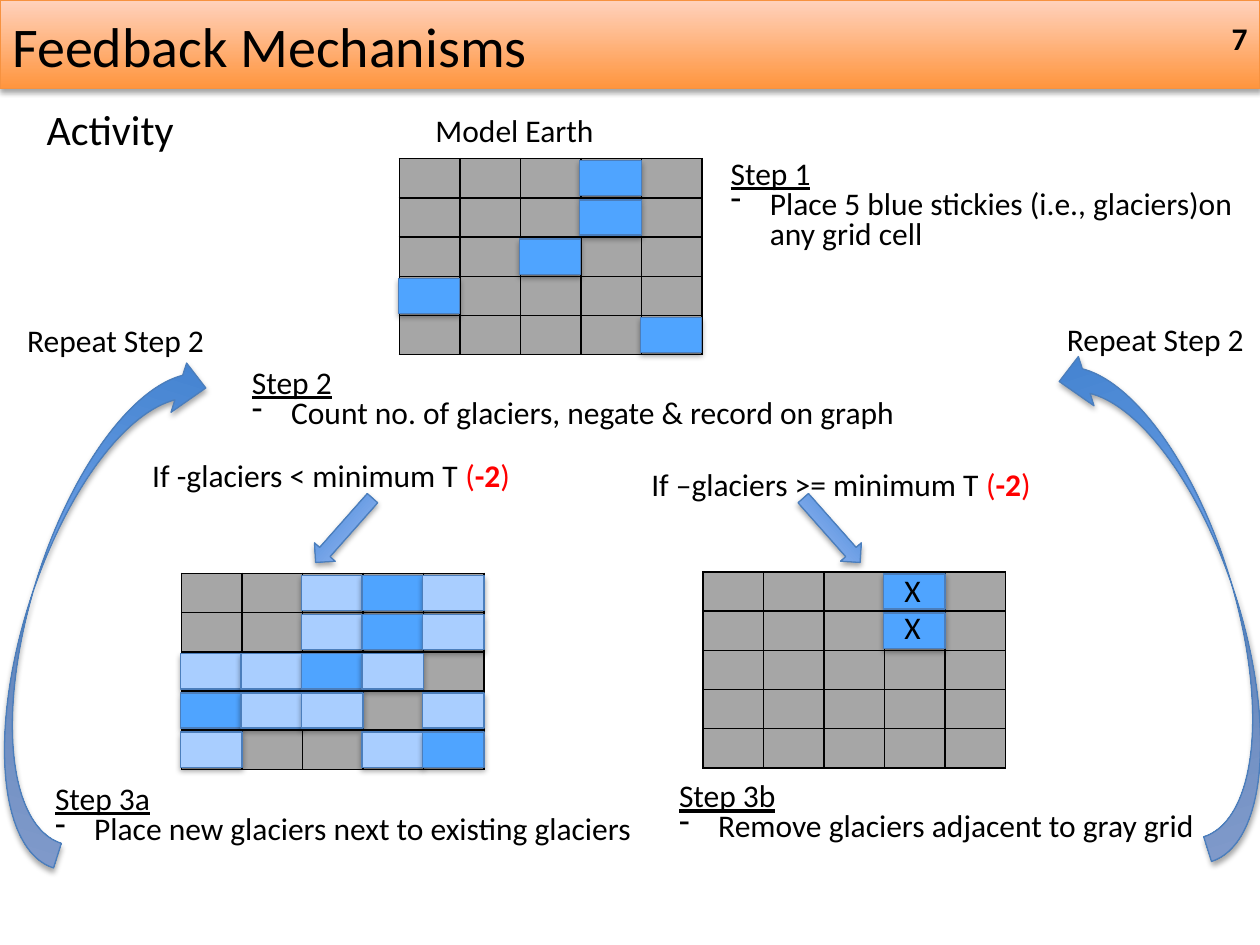
from lxml.etree import SubElement as Sub
from pptx import Presentation
from pptx.dml.color import RGBColor
from pptx.enum.shapes import MSO_SHAPE as Kind
from pptx.enum.text import MSO_ANCHOR as Anchor, MSO_AUTO_SIZE as Auto, PP_ALIGN as Align
from pptx.oxml.ns import qn
from pptx.util import Cm, Pt

rgb = RGBColor.from_string
BLUE, EDGE = ["3F80CE", "A4C4FF"], "4B7EBC"
COL, ROW = 1.22, 0.79
NOTES = {"D": "4FA4FF", "L": "A9CEFF"}

deck = Presentation()
deck.slide_width, deck.slide_height = Cm(25.4), Cm(19.05)
slide = deck.slides.add_slide(deck.slide_layouts[6])
shapes = slide.shapes


def block(kind, box, fill, edge, turn=0, flip=False):
    """Add a shadowed shape; two fill colours make a gradient from the bottom up."""
    shape = shapes.add_shape(kind, *map(Cm, box))
    if len(fill) == 2:
        shape.fill.gradient()
        shape.fill.gradient_angle = 90
        for stop, tint in zip(shape.fill.gradient_stops, fill):
            stop.color.rgb = rgb(tint)
    else:
        shape.fill.solid()
        shape.fill.fore_color.rgb = rgb(fill[0])
    shape.line.color.rgb = rgb(edge)
    shape.line.width = Pt(0.75)
    shape.rotation = turn
    props = shape._element.spPr
    if flip:
        props.find(qn("a:xfrm")).set("flipH", "1")
    shape.shadow.inherit = False
    shade = Sub(props.find(qn("a:effectLst")), qn("a:outerShdw"), blurRad="40000",
                dist="23000", dir="5400000", rotWithShape="0")
    Sub(Sub(shade, qn("a:srgbClr"), val="000000"), qn("a:alpha"), val="35000")


def label(box, paras, wrap=False, size=18, **form):
    """Add a text box; each paragraph is a list of (text, font values, colour)."""
    frame = shapes.add_textbox(*map(Cm, box)).text_frame
    frame.word_wrap = wrap
    frame.auto_size = Auto.SHAPE_TO_FIT_TEXT
    for i, runs in enumerate(paras):
        para = frame.add_paragraph() if i else frame.paragraphs[0]
        for key, val in form.items():
            setattr(para, key, val)
        for words, look, tint in runs:
            run = para.add_run()
            run.text = words
            for key, val in {"name": "Calibri", "size": Pt(size), **look}.items():
                setattr(run.font, key, val)
            run.font.color.rgb = rgb(tint)
    return frame


# Header
block(Kind.RECTANGLE, (0, 0, 25.4, 1.78), ["FF953E", "FFD2BD"], "F69240")
page = label((19.48, 0.25, 5.92, 1.02), [[("7", {"bold": True}, "000000")]],
             wrap=True, alignment=Align.RIGHT)
page.vertical_anchor = Anchor.MIDDLE

# Grids with their glacier notes
grids = [
    (8.05, 3.2, ["...D.", "...D.", "..D..", "D....", "....D"]),
    (3.66, 11.56, ["..LDL", "..LDL", "LLDL.", "DLL.L", "L..LD"]),
    (14.17, 11.53, ["...D.", "...D.", ".....", ".....", "....."]),
]
for left, top, plan in grids:
    table = shapes.add_table(5, 5, Cm(left), Cm(top), Cm(5 * COL), Cm(5 * ROW)).table
    for col in table.columns:
        col.width = Cm(COL)
    for row in table.rows:
        row.height = Cm(ROW)
    for cell in table.iter_cells():
        Sub(cell.text_frame.paragraphs[0]._p, qn("a:endParaRPr"), sz="800")
        for side in ("margin_top", "margin_bottom"):
            setattr(cell, side, 0)
        props = cell._tc.get_or_add_tcPr()
        for side in "LRTB":
            line = Sub(props, qn("a:ln" + side), w="12700")
            Sub(Sub(line, qn("a:solidFill")), qn("a:srgbClr"), val="000000")
        cell.fill.solid()
        cell.fill.fore_color.rgb = rgb("A6A6A6")
    for r, marks in enumerate(plan):
        for c, mark in enumerate(marks):
            if mark in NOTES:
                spot = (left + c * COL - 0.02, top + r * ROW + 0.04, 1.24, 0.71)
                block(Kind.RECTANGLE, spot, [NOTES[mark]], EDGE)

# Arrows
for kind, box, turn, flip in [
    (Kind.RIGHT_ARROW, (6.07, 10.41, 1.73, 0.56), 131.5, False),
    (Kind.RIGHT_ARROW, (15.9, 10.41, 1.73, 0.56), 228.5, True),
    (Kind.CURVED_RIGHT_ARROW, (22.76, 6.63, 2.08, 10.67), 162.4, False),
    (Kind.CURVED_RIGHT_ARROW, (0.66, 6.76, 2.08, 10.67), 197.6, True),
]:
    block(kind, box, BLUE, EDGE, turn, flip)

# Single-line labels
for box, words, size, gap in [
    ((0, 0.1, 11, 1.63), "Feedback Mechanisms", 32, 1),
    ((0.69, 2.08, 3.12, 1.19), "Activity", 24, 0.9),
    ((8.53, 2.11, 3.73, 1.02), "Model Earth", 18, 1),
    ((21.26, 6.32, 4.14, 1.02), "Repeat Step 2", 18, 1),
    ((0.3, 6.35, 4.14, 1.02), "Repeat Step 2", 18, 1),
    ((17.98, 11.38, 0.84, 1.02), "X", 18, 1),
    ((17.98, 12.14, 0.84, 1.02), "X", 18, 1),
]:
    label(box, [[(words, {}, "000000")]], size=size, line_spacing=gap)

# Conditions
for box, words in [
    ((2.82, 9.07, 7.8, 1.02), "If -glaciers < minimum T "),
    ((12.88, 9.25, 8.25, 1.02), "If –glaciers >= minimum T "),
]:
    label(box, [[(words, {}, "000000"), ("(", {}, "FF0000"),
                 ("-2", {"bold": True}, "FF0000"), (")", {}, "FF0000")]])

# Steps
for box, head, task in [
    ((14.48, 3.12, 10.77, 2.13), "Step 1",
     "Place 5 blue stickies (i.e., glaciers)on any grid cell"),
    ((4.83, 7.34, 14.3, 1.52), "Step 2",
     "Count no. of glaciers, negate & record on graph"),
    ((0.86, 15.72, 12.17, 1.52), "Step 3a",
     "Place new glaciers next to existing glaciers"),
    ((13.44, 15.67, 11.76, 1.52), "Step 3b",
     "Remove glaciers adjacent to gray grid"),
]:
    frame = label(box, [[(head, {"underline": True}, "000000")], [(task, {}, "000000")]],
                  wrap=True, line_spacing=0.8)
    props = frame.paragraphs[1]._p.get_or_add_pPr()
    for key, val in {"marL": Cm(0.79), "indent": -Cm(0.79)}.items():
        props.set(key, str(int(val)))
    Sub(props, qn("a:buChar"), char="-")

deck.save("out.pptx")
